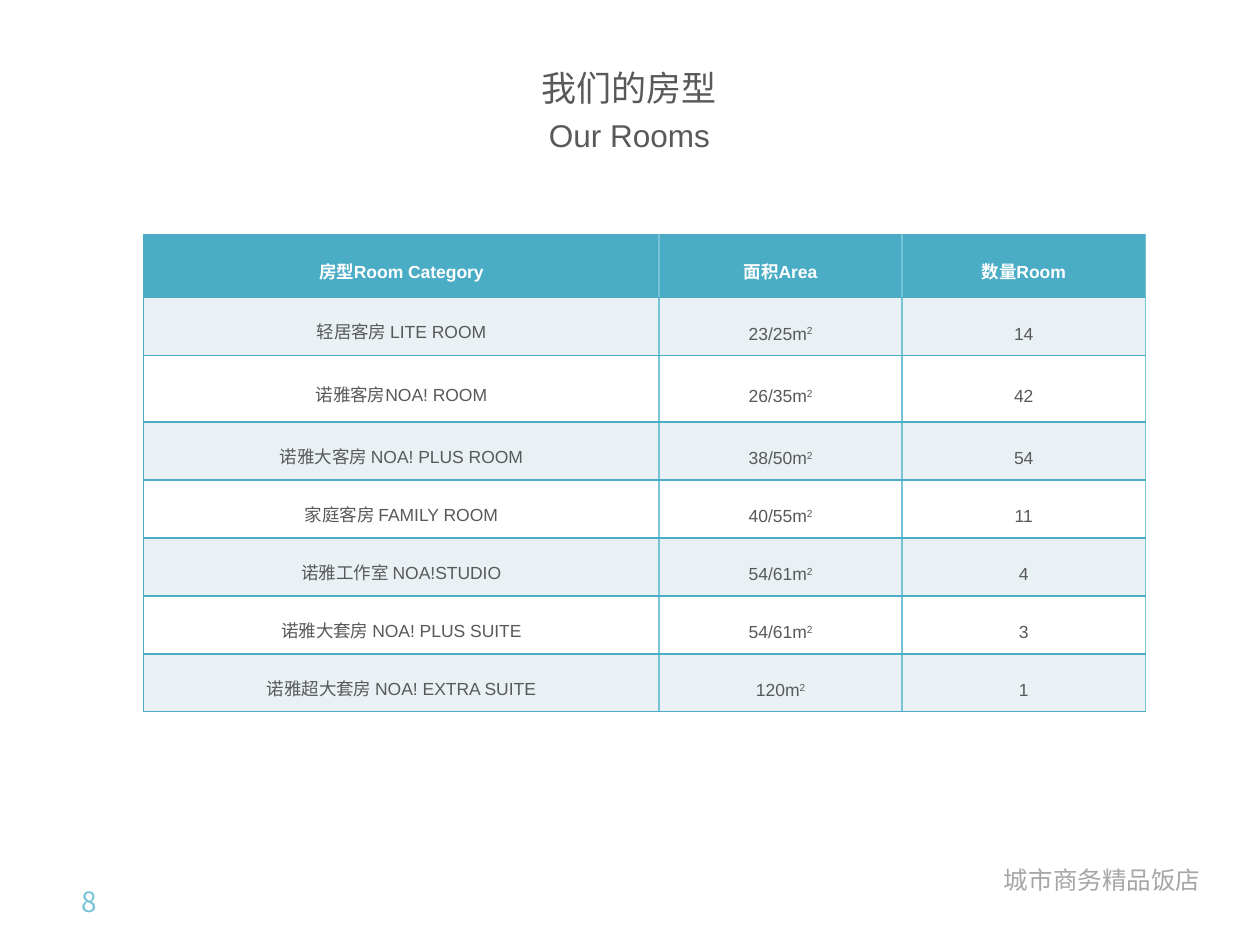
from dataclasses import dataclass

import lxml.etree
import pptx
import pptx.dml.color
import pptx.enum.text
import pptx.oxml.ns
import pptx.util

Inches = pptx.util.Inches
Pt = pptx.util.Pt
qn = pptx.oxml.ns.qn
ALIGN = pptx.enum.text.PP_ALIGN
ANCHOR = pptx.enum.text.MSO_ANCHOR
CJK = "Noto Sans CJK SC"
LATIN = "Arial"
COLORS = {
    "text": "595959",
    "footer": "A6A6A6",
    "header": "4BACC6",
    "divider": "76C4D5",
    "band": "E9F1F5",
    "white": "FFFFFF",
}


@dataclass
class Room:
    category: str
    area: str
    count: int
    height: float = 0.46


ROOMS = [
    Room("轻居客房 LITE ROOM", "23/25m", 14),
    Room("诺雅客房NOA! ROOM", "26/35m", 42, height=0.53),
    Room("诺雅大客房 NOA! PLUS ROOM", "38/50m", 54),
    Room("家庭客房 FAMILY ROOM", "40/55m", 11),
    Room("诺雅工作室 NOA!STUDIO", "54/61m", 4),
    Room("诺雅大套房 NOA! PLUS SUITE", "54/61m", 3),
    Room("诺雅超大套房 NOA! EXTRA SUITE", "120m", 1),
]
HEADERS = ["房型Room Category", "面积Area", "数量Room"]
COLUMN_WIDTHS = [4.09, 1.93, 1.93]
HEADER_HEIGHT = 0.5


def rgb(color: str) -> pptx.dml.color.RGBColor:
    return pptx.dml.color.RGBColor.from_string(COLORS[color])


def add_run(p, text: str, *, size: float = 10, font: str = LATIN,
            color: str = "text", bold: bool = False, baseline: int = 0,
            align=None, spacing: float | None = None) -> None:
    if align is not None:
        p.alignment = align
    if spacing is not None:
        p.line_spacing = Pt(spacing)
    r = p.add_run()
    r.text = text
    r.font.size = Pt(size)
    r.font.bold = bold
    r.font.name = font
    r.font.color.rgb = rgb(color)
    rPr = r._r.get_or_add_rPr()
    lxml.etree.SubElement(rPr, qn("a:ea")).set("typeface", CJK)
    if baseline:
        rPr.set("baseline", str(baseline * 1000))


def add_box(s, left: float, top: float, width: float, height: float, *,
            anchor=ANCHOR.TOP, wrap: bool = True, inset: float | None = None):
    sp = s.shapes.add_textbox(Inches(left), Inches(top), Inches(width), Inches(height))
    tf = sp.text_frame
    tf.word_wrap = wrap
    tf.vertical_anchor = anchor
    if inset is not None:
        tf.margin_left = tf.margin_right = Inches(inset)
        tf.margin_top = tf.margin_bottom = Inches(inset)
    return tf


def set_borders(cell, first: bool) -> None:
    sides = {
        "a:lnL": "header" if first else "divider",
        "a:lnR": "divider",
        "a:lnT": "header",
        "a:lnB": "header",
    }
    tcPr = cell._tc.get_or_add_tcPr()
    for index, (tag, color) in enumerate(sides.items()):
        ln = lxml.etree.Element(qn(tag), w=str(Pt(1)))
        fill = lxml.etree.SubElement(ln, qn("a:solidFill"))
        lxml.etree.SubElement(fill, qn("a:srgbClr")).set("val", COLORS[color])
        tcPr.insert(index, ln)


def fill_cell(cell, text: str, fill: str, first: bool, *, square: bool = False,
              color: str = "text", bold: bool = False) -> None:
    cell.vertical_anchor = ANCHOR.MIDDLE
    cell.fill.solid()
    cell.fill.fore_color.rgb = rgb(fill)
    set_borders(cell, first)
    p = cell.text_frame.paragraphs[0]
    add_run(p, text, color=color, bold=bold, align=ALIGN.CENTER, spacing=20)
    if square:
        add_run(p, "2", color=color, baseline=30)


def add_room_table(s, rooms: list[Room]) -> None:
    heights = [HEADER_HEIGHT] + [room.height for room in rooms]
    table = s.shapes.add_table(
        len(heights), len(HEADERS), Inches(1.14), Inches(1.86),
        Inches(sum(COLUMN_WIDTHS)), Inches(sum(heights))).table
    for column, width in zip(table.columns, COLUMN_WIDTHS):
        column.width = Inches(width)
    for row, height in zip(table.rows, heights):
        row.height = Inches(height)
    for c, header in enumerate(HEADERS):
        fill_cell(table.cell(0, c), header, "header", c == 0, color="white", bold=True)
    for i, room in enumerate(rooms, start=1):
        fill = "band" if i % 2 else "white"
        for c, text in enumerate([room.category, room.area, str(room.count)]):
            fill_cell(table.cell(i, c), text, fill, c == 0, square=c == 1)
        category = table.cell(i, 0)
        category.margin_left = category.margin_right = Inches(0.07)
        category.margin_top = category.margin_bottom = 0


def main() -> None:
    prs = pptx.Presentation()
    prs.slide_width, prs.slide_height = Inches(10), Inches(7.5)
    s = prs.slides.add_slide(prs.slide_layouts[6])

    footer = add_box(s, 7.87, 6.82, 1.77, 0.34, wrap=False)
    add_run(footer.paragraphs[0], "城市商务精品饭店", size=14, font=CJK, color="footer")

    add_room_table(s, ROOMS)

    title = add_box(s, 4.07, 0.44, 1.85, 0.84, anchor=ANCHOR.MIDDLE, inset=0.06)
    add_run(title.paragraphs[0], "我们的房型", size=20, font=CJK,
            align=ALIGN.CENTER, spacing=26)
    add_run(title.add_paragraph(), "Our Rooms", size=18,
            align=ALIGN.CENTER, spacing=26)

    number = add_box(s, 0.55, 6.95, 2.33, 0.4, anchor=ANCHOR.MIDDLE)
    add_run(number.paragraphs[0], "8", size=16, font=CJK, color="divider")

    prs.save("out.pptx")


if __name__ == "__main__":
    main()
